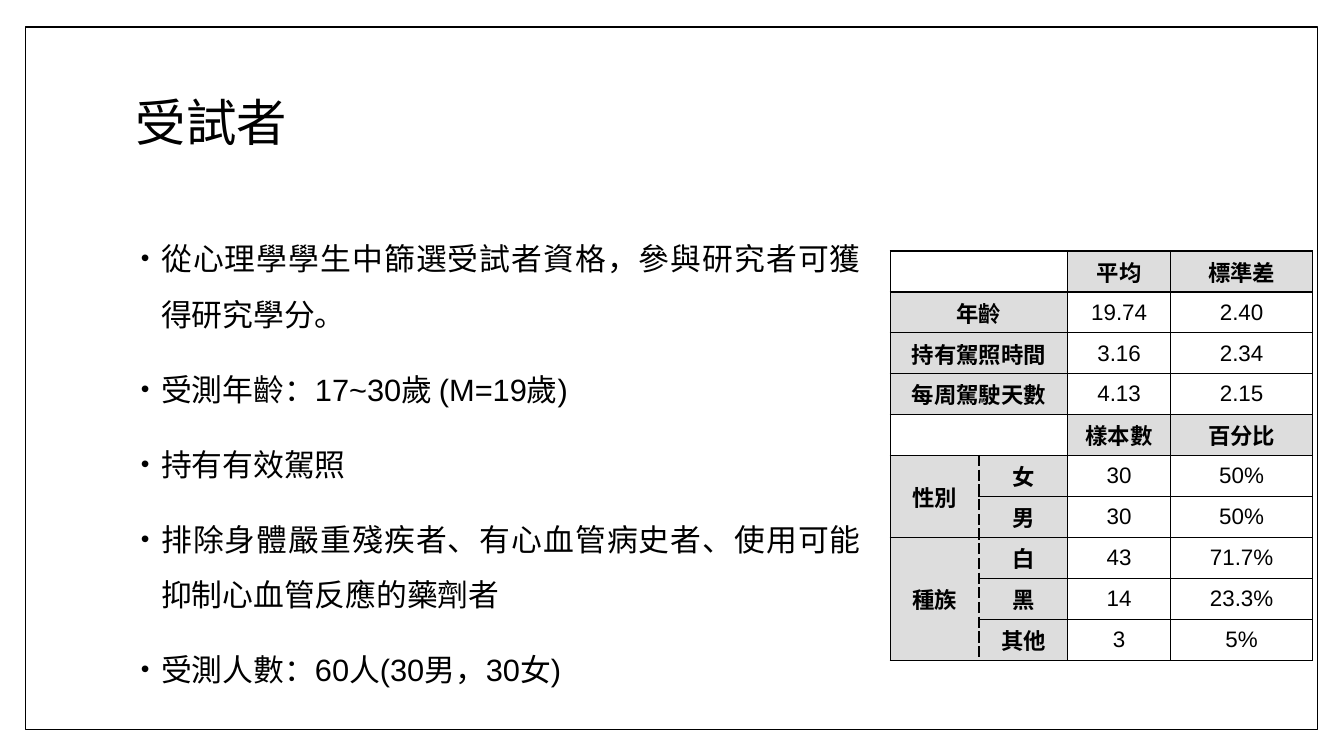
from lxml.etree import SubElement
from pptx import Presentation
from pptx.dml.color import RGBColor
from pptx.enum.shapes import MSO_SHAPE
from pptx.enum.text import MSO_ANCHOR, PP_ALIGN
from pptx.oxml import parse_xml
from pptx.oxml.ns import nsdecls, qn
from pptx.util import Inches, Pt

BLACK, WHITE, GREY = "000000", "FFFFFF", "DDDDDD"


def paint(code):
    return RGBColor.from_string(code)


def box(*sides):
    return [Inches(side) for side in sides]


class Page:
    sans = "Arial"
    head = "Montserrat"

    def __init__(self, slide):
        self.slide = slide

    def style(self, para, size, face, bold=False):
        font = para.font
        font.size, font.name, font.bold = Pt(size), face, bold
        font.color.rgb = paint(BLACK)

    def frame(self, *sides):
        rect = self.slide.shapes.add_shape(MSO_SHAPE.RECTANGLE, *box(*sides))
        rect.shadow.inherit = False
        rect.fill.solid()
        rect.fill.fore_color.rgb = paint(WHITE)
        rect.line.color.rgb = paint(BLACK)
        rect.line.width = Pt(1)

    def text(self, lines, *sides):
        body = self.slide.shapes.add_textbox(*box(*sides)).text_frame
        body.word_wrap = True
        body.vertical_anchor = MSO_ANCHOR.MIDDLE
        body.text = "\n".join(lines)
        return body.paragraphs

    def title(self, line, *sides):
        for para in self.text([line], *sides):
            self.style(para, 36, self.head)
            para.line_spacing = 0.9

    def list(self, lines, *sides):
        for para in self.text(lines, *sides):
            self.style(para, 22, self.sans)
            para.alignment = PP_ALIGN.JUSTIFY
            para.line_spacing = 1.5
            para.space_before = Pt(14)
            props = para._p.get_or_add_pPr()
            props.set("marL", str(Inches(0.25)))
            props.set("indent", str(Inches(-0.2)))
            color = SubElement(props, qn("a:buClr"))
            SubElement(color, qn("a:srgbClr"), val=BLACK)
            SubElement(props, qn("a:buSzPct"), val="80000")
            SubElement(props, qn("a:buFont"), typeface=self.sans)
            SubElement(props, qn("a:buChar"), char="•")

    def edge(self, cell, dashed):
        props = cell._tc.get_or_add_tcPr()
        for spot, side in enumerate("LRTB"):
            dash = "sysDash" if side == dashed else "solid"
            props.insert(spot, parse_xml(
                f'<a:ln{side} {nsdecls("a")} w="{Pt(1)}"><a:solidFill>'
                f'<a:srgbClr val="{BLACK}"/></a:solidFill>'
                f'<a:prstDash val="{dash}"/></a:ln{side}>'))

    def cell(self, cell, text, dashed):
        label = text != "" and not text[0].isdigit()
        cell.text = text
        cell.vertical_anchor = MSO_ANCHOR.MIDDLE
        cell.margin_top = cell.margin_bottom = 0
        cell.fill.solid()
        cell.fill.fore_color.rgb = paint(GREY if label else WHITE)
        para = cell.text_frame.paragraphs[0]
        para.alignment = PP_ALIGN.CENTER
        self.style(para, 16, self.sans, label)
        self.edge(cell, dashed)

    def table(self, rows, widths, spans, split, *sides):
        grid = self.slide.shapes.add_table(len(rows), len(widths), *box(*sides)).table
        grid.first_row = grid.horz_banding = False
        for col, width in zip(grid.columns, widths):
            col.width = Inches(width)
        for r, row in enumerate(rows):
            for c, text in enumerate(row):
                dashed = {0: "R", 1: "L"}.get(c) if r >= split else None
                self.cell(grid.cell(r, c), text, dashed)
        for first, last in spans:
            grid.cell(*first).merge(grid.cell(*last))


ROWS = [
    ("", "", "平均", "標準差"),
    ("年齡", "", "19.74", "2.40"),
    ("持有駕照時間", "", "3.16", "2.34"),
    ("每周駕駛天數", "", "4.13", "2.15"),
    ("", "", "樣本數", "百分比"),
    ("性別", "女", "30", "50%"),
    ("", "男", "30", "50%"),
    ("種族", "白", "43", "71.7%"),
    ("", "黑", "14", "23.3%"),
    ("", "其他", "3", "5%"),
]
SPLIT = 5
SPANS = [((r, 0), (r, 1)) for r in range(SPLIT)]
SPANS += [((5, 0), (6, 0)), ((7, 0), (9, 0))]
POINTS = [
    "從心理學學生中篩選受試者資格，參與研究者可獲得研究學分。",
    "受測年齡：17~30歲 (M=19歲)",
    "持有有效駕照",
    "排除身體嚴重殘疾者、有心血管病史者、使用可能抑制心血管反應的藥劑者",
    "受測人數：60人(30男，30女)",
]


def main():
    deck = Presentation()
    deck.slide_width, deck.slide_height = box(13.33, 7.5)
    page = Page(deck.slides.add_slide(deck.slide_layouts[6]))
    page.frame(0.25, 0.27, 12.82, 6.97)
    page.title("受試者", 1.25, 0.67, 10.8, 1.15)
    page.list(POINTS, 1.25, 1.82, 7.39, 5.38)
    page.table(ROWS, (0.88, 0.88, 1.02, 1.41), SPANS, SPLIT, 8.83, 2.49, 4.2, 4.06)
    deck.save("out.pptx")


if __name__ == "__main__":
    main()
